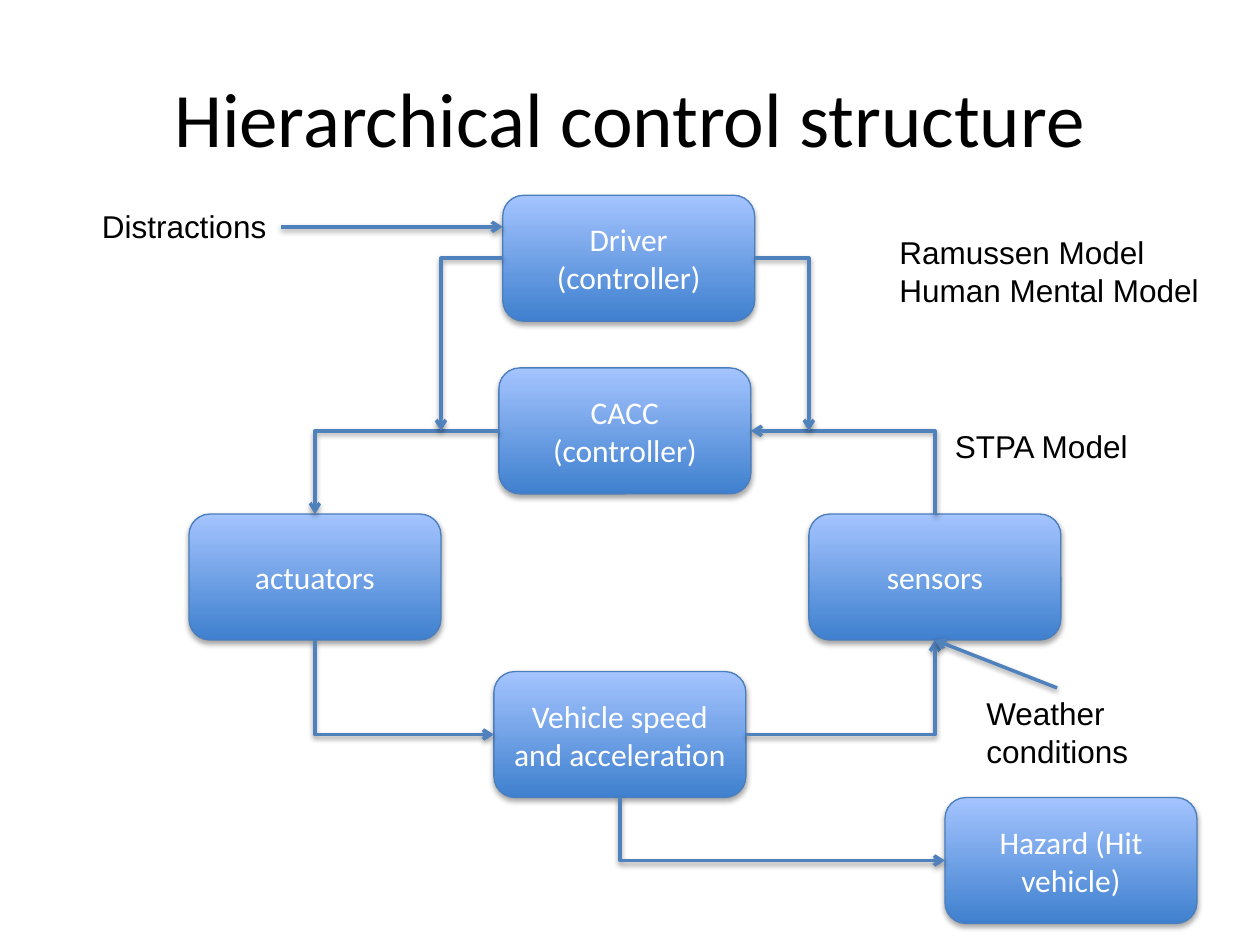
import pptx
import pptx.dml.color
import pptx.enum.shapes
import pptx.enum.text
import pptx.oxml
import pptx.oxml.ns
import pptx.util

RGB = pptx.dml.color.RGBColor
SHAPE = pptx.enum.shapes.MSO_SHAPE
LINK = pptx.enum.shapes.MSO_CONNECTOR
ALIGN = pptx.enum.text.PP_ALIGN
ANCHOR = pptx.enum.text.MSO_ANCHOR
FIT = pptx.enum.text.MSO_AUTO_SIZE
Pt = pptx.util.Pt
qn = pptx.oxml.ns.qn

BLACK = RGB(0, 0, 0)
WHITE = RGB(255, 255, 255)
DEEP = RGB(0x3F, 0x80, 0xCE)
PALE = RGB(0xA4, 0xC4, 0xFF)
EDGE = RGB(0x4B, 0x7E, 0xBC)
LINE = RGB(0x4F, 0x81, 0xBD)

NS = "http://schemas.openxmlformats.org/drawingml/2006/main"
SCALE = 9144  # EMU in one px, 100 px to the inch
TOP, LEFT, BASE, RIGHT = range(4)  # connection sites of a box


def px(*sizes):
    return [size * SCALE for size in sizes]


def shade(props, drop, alpha):
    """Give shape properties a soft shadow straight below."""
    old = props.find(qn("a:effectLst"))
    if old is not None:
        props.remove(old)
    props.append(pptx.oxml.parse_xml(
        f'<a:effectLst xmlns:a="{NS}">'
        f'<a:outerShdw blurRad="40000" dist="{drop}" dir="5400000" rotWithShape="0">'
        f'<a:srgbClr val="000000"><a:alpha val="{alpha}000"/></a:srgbClr>'
        '</a:outerShdw></a:effectLst>'))


class Board:
    """Holds the style and the current slide."""

    main, note = "Calibri", "Arial"
    size = 18

    def __init__(self, deck):
        self.slide = deck.slides.add_slide(deck.slide_layouts[5])
        self.shapes = self.slide.shapes

    def put(self, para, text, font, size, color):
        run = para.add_run()
        run.text = text
        run.font.name = font
        run.font.size = Pt(size)
        run.font.color.rgb = color

    def title(self, text, x, y, w, h):
        shape = self.shapes.title
        shape.left, shape.top, shape.width, shape.height = px(x, y, w, h)
        shape.text_frame.vertical_anchor = ANCHOR.MIDDLE
        para = shape.text_frame.paragraphs[0]
        para.alignment = ALIGN.CENTER
        self.put(para, text, self.main, 44, BLACK)

    def box(self, text, x, y):
        shape = self.shapes.add_shape(SHAPE.ROUNDED_RECTANGLE, *px(x, y, 200, 100))
        shape.shadow.inherit = False
        shape.fill.gradient()
        shape.fill.gradient_angle = 90
        for stop, color, place in zip(shape.fill.gradient_stops, (DEEP, PALE), (0, 1)):
            stop.color.rgb = color
            stop.position = place
        shape.line.color.rgb = EDGE
        shape.line.width = Pt(0.75)
        shade(shape._element.spPr, 23000, 35)
        frame = shape.text_frame
        frame.word_wrap = True
        frame.vertical_anchor = ANCHOR.MIDDLE
        para = frame.paragraphs[0]
        para.alignment = ALIGN.CENTER
        self.put(para, text, self.main, self.size, WHITE)
        return shape

    def label(self, lines, x, y, w, h):
        frame = self.shapes.add_textbox(*px(x, y, w, h)).text_frame
        frame.word_wrap = False
        frame.auto_size = FIT.SHAPE_TO_FIT_TEXT
        for i, text in enumerate(lines):
            para = frame.add_paragraph() if i else frame.paragraphs[0]
            self.put(para, text, self.note, self.size, BLACK)

    def link(self, start, stop, tip="tailEnd", bent=True):
        """Join two ends, each a (box, site) pair or an (x, y) point.

        A bent link leaves its start sideways; tip tells which end has the arrow.
        """
        line = self.shapes.add_connector(LINK.ELBOW if bent else LINK.STRAIGHT, 0, 0, 0, 0)
        if isinstance(start[0], int):
            line.begin_x, line.begin_y = px(*start)
        else:
            line.begin_connect(*start)
        if isinstance(stop[0], int):
            line.end_x, line.end_y = px(*stop)
        else:
            line.end_connect(*stop)
        line.line.color.rgb = LINE
        line.line.width = Pt(2)
        props = line._element.spPr
        if bent:
            props.find(qn("a:prstGeom")).set("prst", "bentConnector2")
        stroke = props.find(qn("a:ln"))
        stroke.append(pptx.oxml.parse_xml(f'<a:{tip} xmlns:a="{NS}" type="arrow"/>'))
        shade(props, 20000, 38)


def main():
    deck = pptx.Presentation()
    deck.slide_width, deck.slide_height = px(1000, 750)
    board = Board(deck)
    board.title("Hierarchical control structure", 50, 30, 900, 125)

    speed = board.box("Vehicle speed and acceleration", 392, 533)
    cacc = board.box("CACC (controller)", 396, 292)
    driver = board.box("Driver (controller)", 399, 155)
    act = board.box("actuators", 150, 408)
    sensor = board.box("sensors", 642, 408)
    hazard = board.box("Hazard (Hit vehicle)", 750, 633)

    board.link((cacc, LEFT), (act, TOP))
    board.link((cacc, RIGHT), (sensor, TOP), "headEnd")
    board.link((driver, RIGHT), (642, 342))
    board.link((driver, LEFT), (350, 342))
    board.link((speed, LEFT), (act, BASE), "headEnd")
    board.link((speed, RIGHT), (sensor, BASE))
    board.link((hazard, LEFT), (speed, BASE), "headEnd")
    board.link((223, 180), (399, 180), bent=False)
    board.link((839, 546), (sensor, BASE), bent=False)

    board.label(["Ramussen Model", "Human Mental Model"], 704, 180, 260, 71)
    board.label(["STPA Model"], 748, 334, 159, 40)
    board.label(["Distractions"], 71, 159, 152, 40)
    board.label(["Weather", "conditions"], 773, 546, 134, 71)
    deck.save("out.pptx")


if __name__ == "__main__":
    main()
